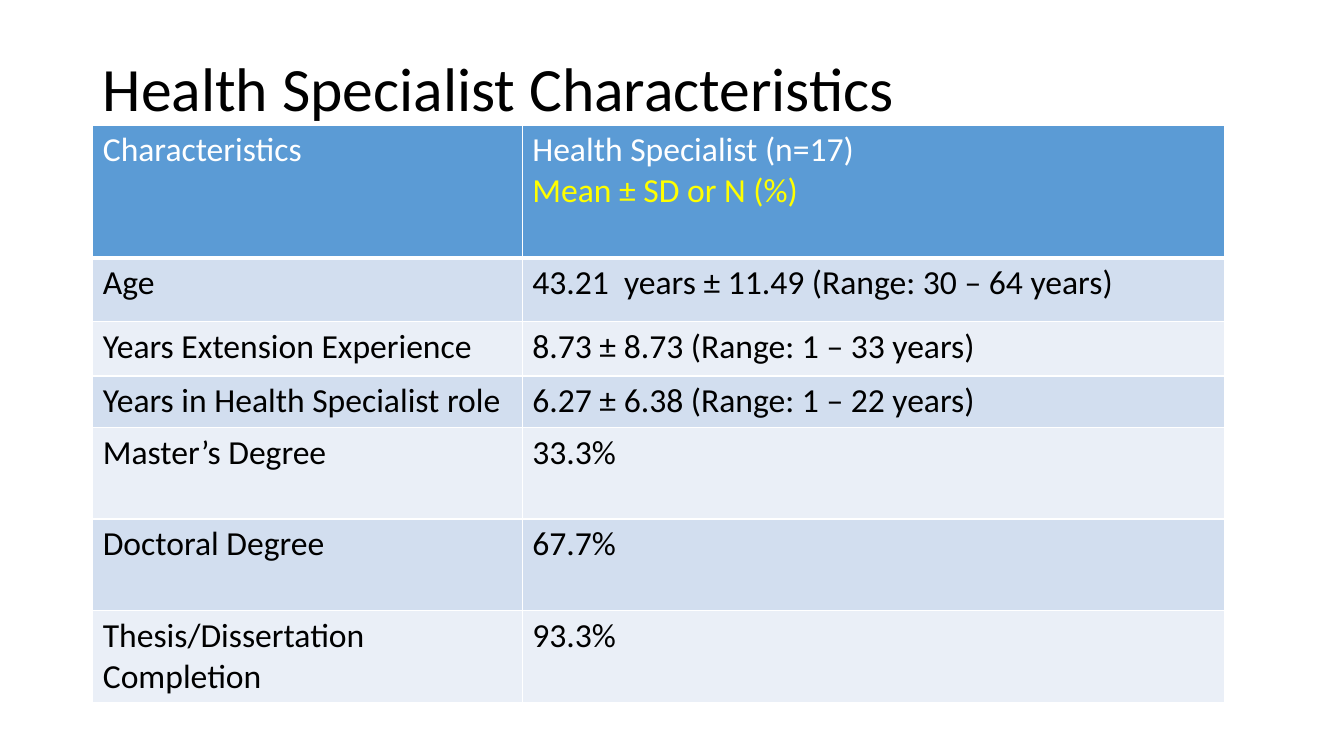
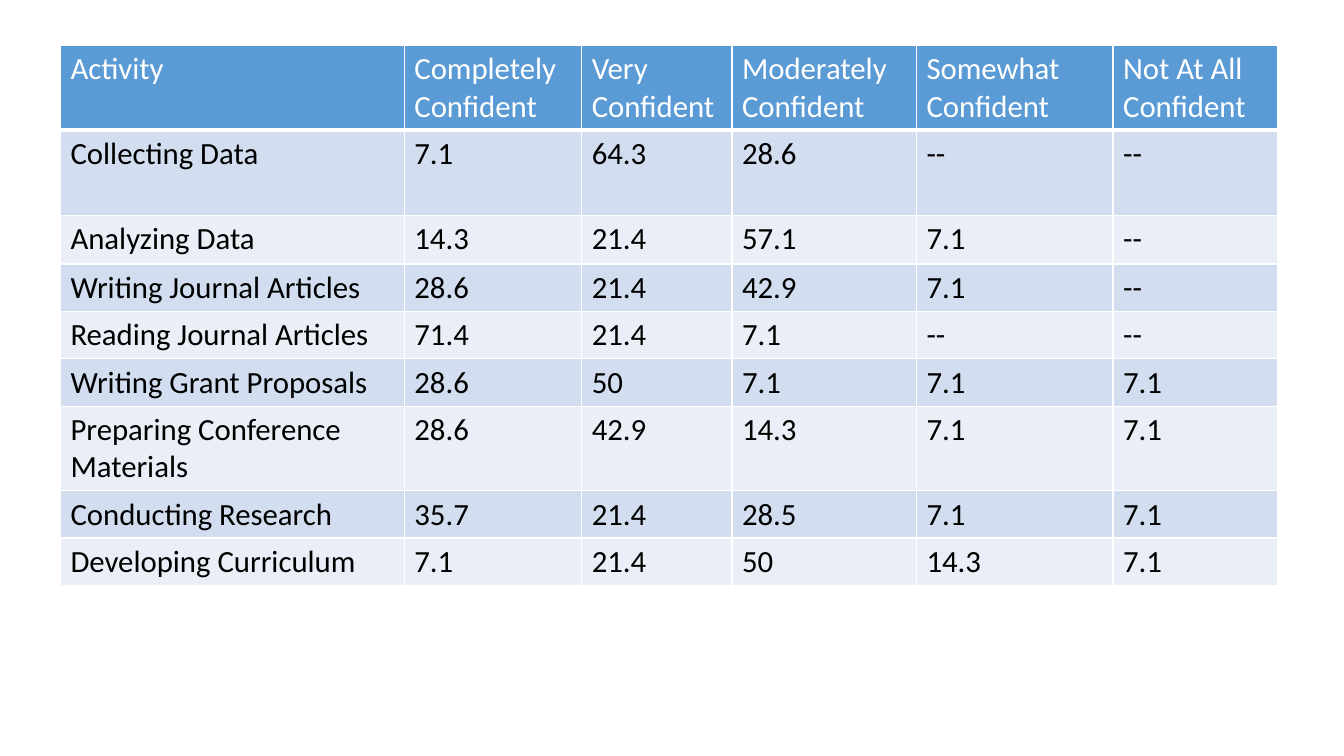
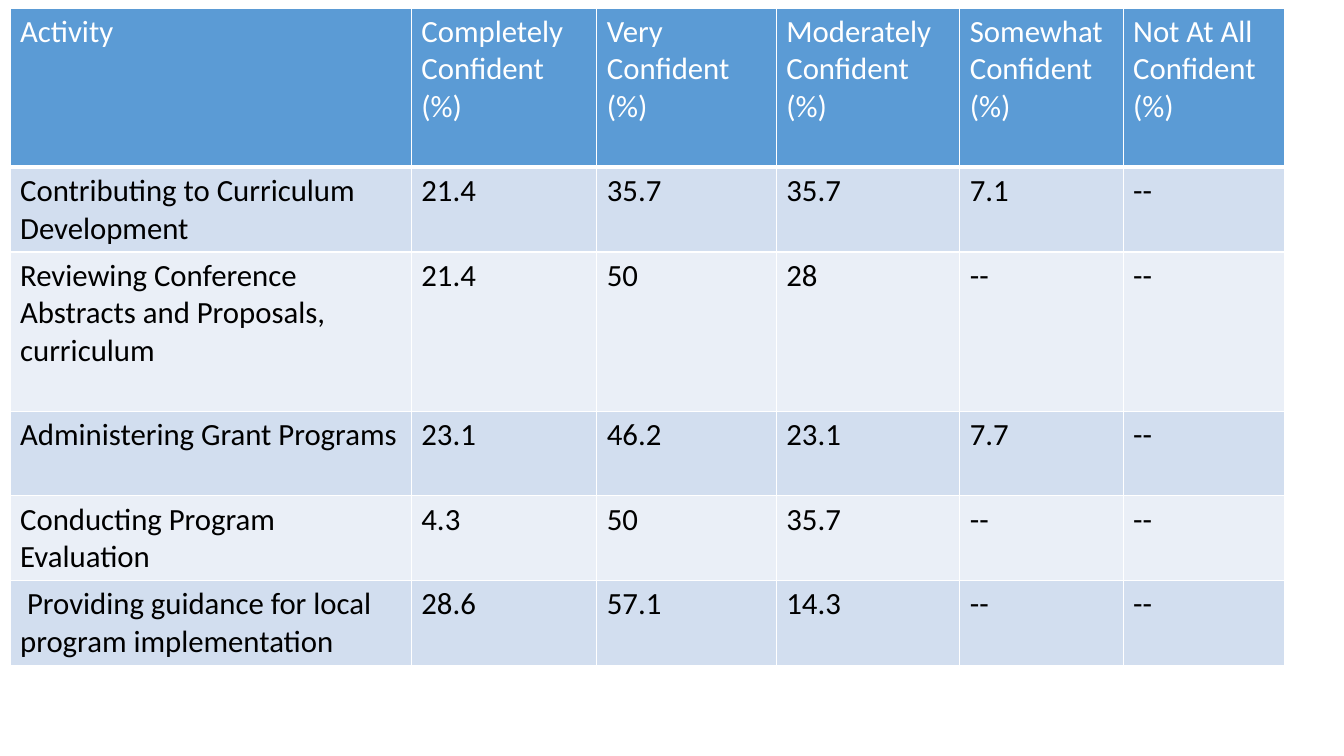
import pptx
import pptx.util
import pptx.dml.color
import pptx.enum.text
import pptx.oxml
import pptx.oxml.ns

PX = 9144  # 100 px to the inch
FONT = "Calibri"
BLACK, WHITE, YELLOW = "000000", "FFFFFF", "FFFF00"
HEADER, BANDS = "5B9BD5", ("D2DEEF", "EAEFF7")
LEVELS = ["Completely", "Very", "Moderately", "Somewhat", "Not At All"]


def rgb(value):
    return pptx.dml.color.RGBColor.from_string(value)


def write(p, text, size, color):
    r = p.add_run()
    r.text = text
    for name, value in {"name": FONT, "size": pptx.util.Pt(size), "bold": False}.items():
        setattr(r.font, name, value)
    r.font.color.rgb = rgb(color)


# Table contents: place, text size, column widths, row heights, rows
tables = [
    {
        "at": (92, 124), "size": 24, "cols": [426, 697],
        "heights": [132, 63, 54, 51, 91, 91, 91],
        "rows": [
            ["Characteristics", "Health Specialist (n=17)\nMean ± SD or N (%)"],
            ["Age", "43.21  years ± 11.49 (Range: 30 – 64 years)"],
            ["Years Extension Experience", "8.73 ± 8.73 (Range: 1 – 33 years)"],
            ["Years in Health Specialist role", "6.27 ± 6.38 (Range: 1 – 22 years)"],
            ["Master’s Degree", "33.3%"],
            ["Doctoral Degree", "67.7%"],
            ["Thesis/Dissertation Completion", "93.3%"],
        ],
    },
    {
        "at": (60, 45), "size": 22, "cols": [341, 176, 149, 183, 195, 163],
        "heights": [84, 85, 48, 47, 47, 47, 84, 47, 47],
        "rows": [
            ["Activity"] + [f"{level} Confident" for level in LEVELS],
            ["Collecting Data", "7.1", "64.3", "28.6", "--", "--"],
            ["Analyzing Data", "14.3", "21.4", "57.1", "7.1", "--"],
            ["Writing Journal Articles", "28.6", "21.4", "42.9", "7.1", "--"],
            ["Reading Journal Articles", "71.4", "21.4", "7.1", "--", "--"],
            ["Writing Grant Proposals", "28.6", "50", "7.1", "7.1", "7.1"],
            ["Preparing Conference Materials", "28.6", "42.9", "14.3", "7.1", "7.1"],
            ["Conducting Research", "35.7", "21.4", "28.5", "7.1", "7.1"],
            ["Developing Curriculum", "7.1", "21.4", "50", "14.3", "7.1"],
        ],
    },
    {
        "at": (10, 8), "size": 22, "cols": [398, 184, 178, 182, 162, 160],
        "heights": [158, 84, 158, 84, 84, 84],
        "rows": [
            ["Activity"] + [f"{level} Confident (%)" for level in LEVELS],
            ["Contributing to Curriculum Development", "21.4", "35.7", "35.7", "7.1", "--"],
            ["Reviewing Conference Abstracts and Proposals, curriculum",
             "21.4", "50", "28", "--", "--"],
            ["Administering Grant Programs", "23.1", "46.2", "23.1", "7.7", "--"],
            ["Conducting Program Evaluation", "4.3", "50", "35.7", "--", "--"],
            [" Providing guidance for local program implementation",
             "28.6", "57.1", "14.3", "--", "--"],
        ],
    },
]

prs = pptx.Presentation()
prs.slide_width, prs.slide_height = 1333 * PX, 750 * PX

for number, table in enumerate(tables):
    s = prs.slides.add_slide(prs.slide_layouts[6])

    # Title, on the first slide only
    if number == 0:
        tf = s.shapes.add_textbox(92 * PX, 40 * PX, 1150 * PX, 101 * PX).text_frame
        tf.word_wrap = True
        tf.vertical_anchor = pptx.enum.text.MSO_ANCHOR.MIDDLE
        tf.paragraphs[0].line_spacing = 0.9
        write(tf.paragraphs[0], "Health Specialist Characteristics", 44, BLACK)

    # Table grid
    rows, cols, heights = table["rows"], table["cols"], table["heights"]
    left, top = table["at"]
    tbl = s.shapes.add_table(len(rows), len(cols), left * PX, top * PX,
                             sum(cols) * PX, sum(heights) * PX).table
    tbl.first_row = tbl.horz_banding = False
    for col, width in zip(tbl.columns, cols):
        col.width = width * PX
    for row, height in zip(tbl.rows, heights):
        row.height = height * PX

    # Cells: fill, text, white borders
    for i, row in enumerate(rows):
        for j, text in enumerate(row):
            cell = tbl.cell(i, j)
            cell.fill.solid()
            cell.fill.fore_color.rgb = rgb(BANDS[(i - 1) % 2] if i else HEADER)
            tf = cell.text_frame
            for k, line in enumerate(text.split("\n")):
                p = tf.add_paragraph() if k else tf.paragraphs[0]
                write(p, line, table["size"], BLACK if i else YELLOW if k else WHITE)
            tcPr = cell._tc.get_or_add_tcPr()
            for n, side in enumerate("LRTB"):
                points = 3 if i == 0 and side == "B" else 1
                tcPr.insert(n, pptx.oxml.parse_xml(
                    f'<a:ln{side} {pptx.oxml.ns.nsdecls("a")} w="{points * 12700}">'
                    f'<a:solidFill><a:srgbClr val="{WHITE}"/></a:solidFill></a:ln{side}>'))

prs.save("out.pptx")
